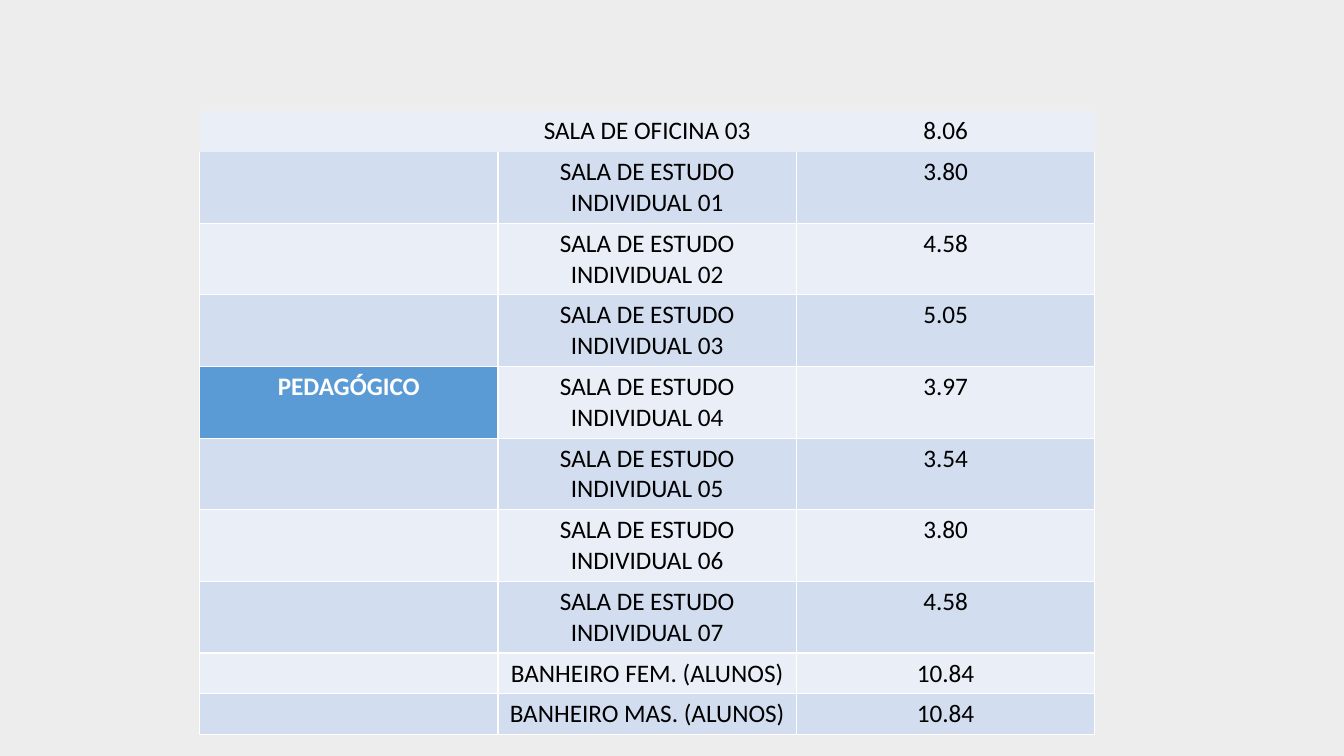
from lxml.etree import SubElement
from pptx import Presentation
from pptx.dml.color import RGBColor as Rgb
from pptx.enum.text import PP_ALIGN as Align
from pptx.oxml.ns import qn
from pptx.util import Cm, Pt

BACKGROUND = "EDEDED"
BAND_FILLS = ("EAEFF7", "D2DEEF")
SECTOR_FILL = "5B9BD5"
WHITE, BLACK = "FFFFFF", "000000"
SECTOR, SECTOR_ROW = "PEDAGÓGICO", 4

STUDY_AREAS = ("3.80", "4.58", "5.05", "3.97", "3.54", "3.80", "4.58")
ROOMS = [
    ("SALA DE OFICINA 03", "8.06"),
    *((f"SALA DE ESTUDO INDIVIDUAL {number:02}", area)
      for number, area in enumerate(STUDY_AREAS, 1)),
    ("BANHEIRO FEM. (ALUNOS)", "10.84"),
    ("BANHEIRO MAS. (ALUNOS)", "10.84"),
]

COLUMN_WIDTH, ROW_HEIGHT = Cm(7.52), Cm(1.03)
TEXT_FORMAT = {"name": "Calibri", "size": Pt(18), "bold": False}


def paint(fill, color):
    fill.solid()
    fill.fore_color.rgb = Rgb.from_string(color)


def set_borders(cell, visible_sides):
    """Draw white edges on the given sides and clear the others."""
    properties = cell._tc.get_or_add_tcPr()
    for side in "LRTB":
        edge = SubElement(properties, qn(f"a:ln{side}"), w=str(Pt(1)))
        if side in visible_sides:
            solid = SubElement(edge, qn("a:solidFill"))
            SubElement(solid, qn("a:srgbClr"), val=WHITE)
        else:
            SubElement(edge, qn("a:noFill"))


def fill_cell(cell, text, fill, sides, color=BLACK, **changes):
    set_borders(cell, sides)
    paint(cell.fill, fill)
    cell.text = text
    paragraph = cell.text_frame.paragraphs[0]
    paragraph.alignment = Align.CENTER
    for attribute, value in {**TEXT_FORMAT, **changes}.items():
        setattr(paragraph.font, attribute, value)
    for run in paragraph.runs:
        for attribute, value in {**TEXT_FORMAT, **changes}.items():
            setattr(run.font, attribute, value)
        run.font.color.rgb = Rgb.from_string(color)


def add_room_table(slide):
    table = slide.shapes.add_table(
        len(ROOMS), 3, Cm(5.03), Cm(2.79),
        3 * COLUMN_WIDTH, len(ROOMS) * ROW_HEIGHT).table
    table.first_row = table.horz_banding = False
    for column in table.columns:
        column.width = COLUMN_WIDTH

    for index, (room, area) in enumerate(ROOMS):
        table.rows[index].height = ROW_HEIGHT
        band = BAND_FILLS[index % 2]
        # The first row is open, and the second has no top edge
        sides = {0: "", 1: "LRB"}.get(index, "LRTB")

        # Sector column
        if index == SECTOR_ROW:
            fill_cell(table.cell(index, 0), SECTOR, SECTOR_FILL, sides,
                      WHITE, bold=True)
        else:
            fill_cell(table.cell(index, 0), "", band, sides)

        # Room and area columns
        for column, text in enumerate((room, area), 1):
            fill_cell(table.cell(index, column), text, band, sides)


def main():
    deck = Presentation()
    deck.slide_width, deck.slide_height = Cm(33.87), Cm(19.05)
    slide = deck.slides.add_slide(deck.slide_layouts[6])
    paint(slide.background.fill, BACKGROUND)
    add_room_table(slide)
    deck.save("out.pptx")


if __name__ == "__main__":
    main()
